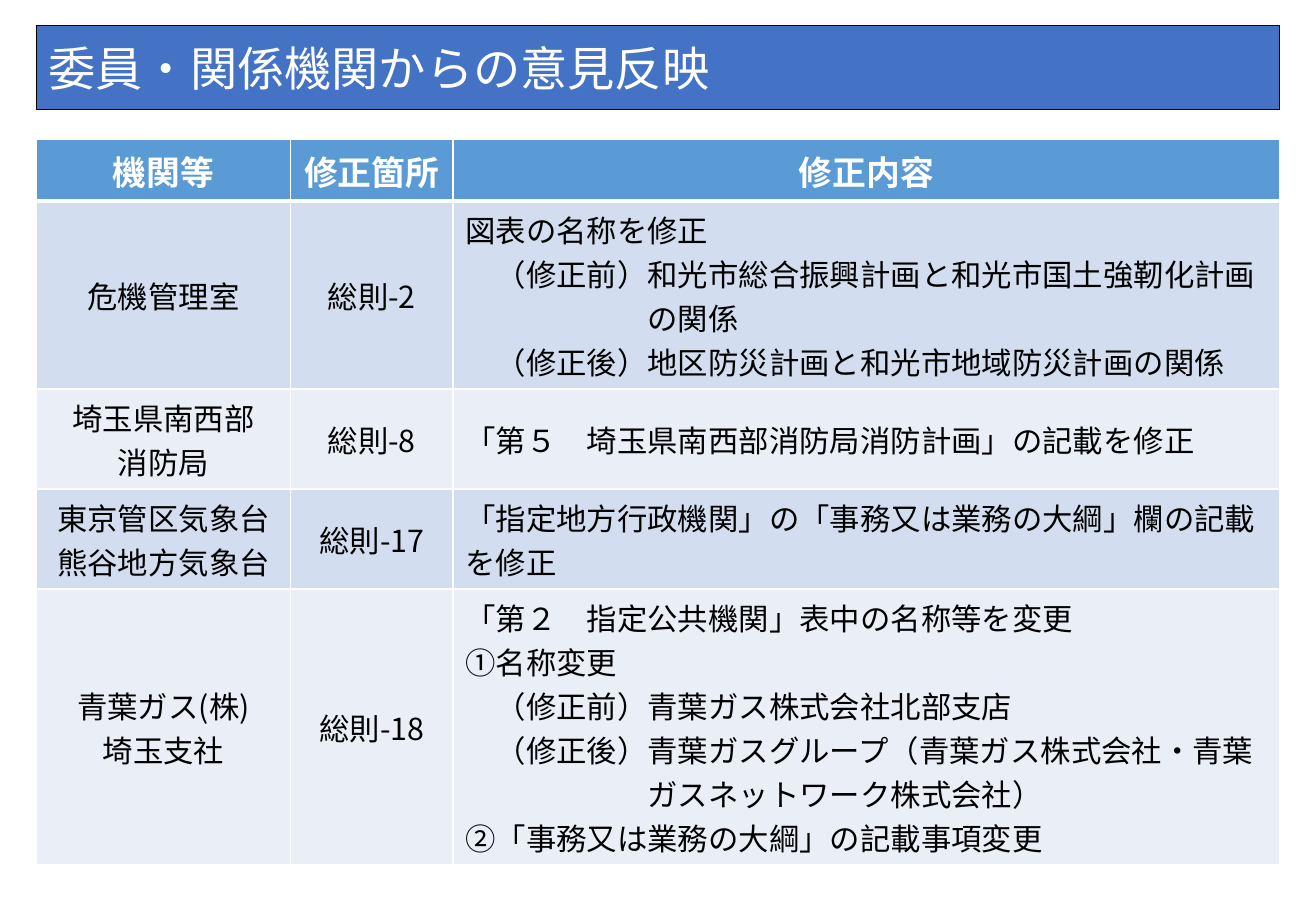
from lxml.etree import SubElement
from pptx import Presentation
from pptx.dml.color import RGBColor
from pptx.enum.text import MSO_ANCHOR as Anchor, MSO_AUTO_SIZE as AutoSize, PP_ALIGN as Align
from pptx.oxml import parse_xml
from pptx.oxml.ns import nsdecls, qn
from pptx.util import Inches, Pt

FONT = "Noto Sans CJK JP"
WHITE = RGBColor(0xFF, 0xFF, 0xFF)
BLACK = RGBColor(0x00, 0x00, 0x00)
TITLE_BLUE = RGBColor(0x44, 0x72, 0xC4)
HEADER_BLUE = RGBColor(0x5B, 0x9B, 0xD5)
BANDS = [RGBColor(0xD2, 0xDE, 0xEF), RGBColor(0xEA, 0xEF, 0xF7)]

COLUMN_WIDTHS = [2.09, 1.34, 6.8]
ROW_HEIGHT = 0.44
BODY_SIZE = 18
TITLE = "委員・関係機関からの意見反映"
HEADER = ["機関等", "修正箇所", "修正内容"]
REVISIONS = [
    (["危機管理室"], ["総則-2"], [
        "図表の名称を修正",
        "（修正前）和光市総合振興計画と和光市国土強靭化計画の関係",
        "（修正後）地区防災計画と和光市地域防災計画の関係",
    ]),
    (["埼玉県南西部", "消防局"], ["総則-8"],
     ["「第５　埼玉県南西部消防局消防計画」の記載を修正"]),
    (["東京管区気象台", "熊谷地方気象台"], ["総則-17"],
     ["「指定地方行政機関」の「事務又は業務の大綱」欄の記載を修正"]),
    (["青葉ガス(株)", "埼玉支社"], ["総則-18"], [
        "「第２　指定公共機関」表中の名称等を変更",
        "①名称変更",
        "（修正前）青葉ガス株式会社北部支店",
        "（修正後）青葉ガスグループ（青葉ガス株式会社・青葉ガスネットワーク株式会社）",
        "②「事務又は業務の大綱」の記載事項変更",
    ]),
]


def add_span(para, text, size, color, bold=False):
    """Add one formatted run to a paragraph."""
    span = para.add_run()
    span.text = text
    font = span.font
    font.name, font.size, font.bold = FONT, Pt(size), bold
    font.color.rgb = color
    SubElement(span._r.get_or_add_rPr(), qn("a:ea")).set("typeface", FONT)


def hang(para, size):
    """Indent by one character and hang later lines after the label."""
    properties = para._p.get_or_add_pPr()
    properties.set("marL", str(Pt(6 * size)))
    properties.set("indent", str(-Pt(5 * size)))


def set_borders(cell, top, bottom):
    """Draw white cell borders with the given top and bottom widths."""
    widths = {"lnL": 1, "lnR": 1, "lnT": top, "lnB": bottom}
    for place, (tag, width) in enumerate(widths.items()):
        line = parse_xml(
            f'<a:{tag} {nsdecls("a")} w="{Pt(width)}"><a:solidFill>'
            f'<a:srgbClr val="{WHITE}"/></a:solidFill></a:{tag}>')
        cell._tc.get_or_add_tcPr().insert(place, line)


def fill_cell(cell, lines, fill, size, color, bold, align):
    """Fill a cell with colour and one paragraph per line."""
    cell.fill.solid()
    cell.fill.fore_color.rgb = fill
    cell.vertical_anchor = Anchor.MIDDLE
    frame = cell.text_frame
    for number, text in enumerate(lines):
        para = frame.add_paragraph() if number else frame.paragraphs[0]
        para.alignment = align
        if text.startswith("（修正"):
            hang(para, size)
        add_span(para, text, size, color, bold)


def place_title(page, left, top, width, height):
    """Turn the title placeholder into the blue banner."""
    box = page.shapes.title
    box.left, box.top, box.width, box.height = left, top, width, height
    box.fill.solid()
    box.fill.fore_color.rgb = TITLE_BLUE
    box.line.color.rgb = BLACK
    box.line.width = Pt(0.75)
    frame = box.text_frame
    frame.auto_size = AutoSize.NONE
    frame.word_wrap = True
    frame.vertical_anchor = Anchor.MIDDLE
    para = frame.paragraphs[0]
    para.alignment = Align.LEFT
    add_span(para, TITLE, 28, WHITE)


def place_revisions(page, left, top, width, height):
    """Place the table of revisions, banded below its header."""
    box = page.shapes.add_table(
        len(REVISIONS) + 1, len(HEADER), left, top, width, height)
    table = box.table
    for column, share in zip(table.columns, COLUMN_WIDTHS):
        column.width = int(width * share / sum(COLUMN_WIDTHS))
    for row in table.rows:
        row.height = Inches(ROW_HEIGHT)
    box.height = height
    for column, text in enumerate(HEADER):
        cell = table.cell(0, column)
        fill_cell(cell, [text], HEADER_BLUE, 20, WHITE, True, Align.CENTER)
        set_borders(cell, 1, 3)
    for row, revision in enumerate(REVISIONS, 1):
        for column, lines in enumerate(revision):
            cell = table.cell(row, column)
            align = Align.LEFT if column == 2 else Align.CENTER
            fill_cell(cell, lines, BANDS[(row - 1) % 2], BODY_SIZE, BLACK, False, align)
            set_borders(cell, 3 if row == 1 else 1, 1)


def main():
    """Build the slide and save the deck."""
    deck = Presentation()
    deck.slide_width, deck.slide_height = Inches(10.83), Inches(7.5)
    page = deck.slides.add_slide(deck.slide_layouts[5])
    left = Inches(0.3)
    width = deck.slide_width - 2 * left
    place_title(page, left, Inches(0.21), width, Inches(0.69))
    place_revisions(page, left, Inches(1.15), width, Inches(5.04))
    deck.save("out.pptx")


if __name__ == "__main__":
    main()
